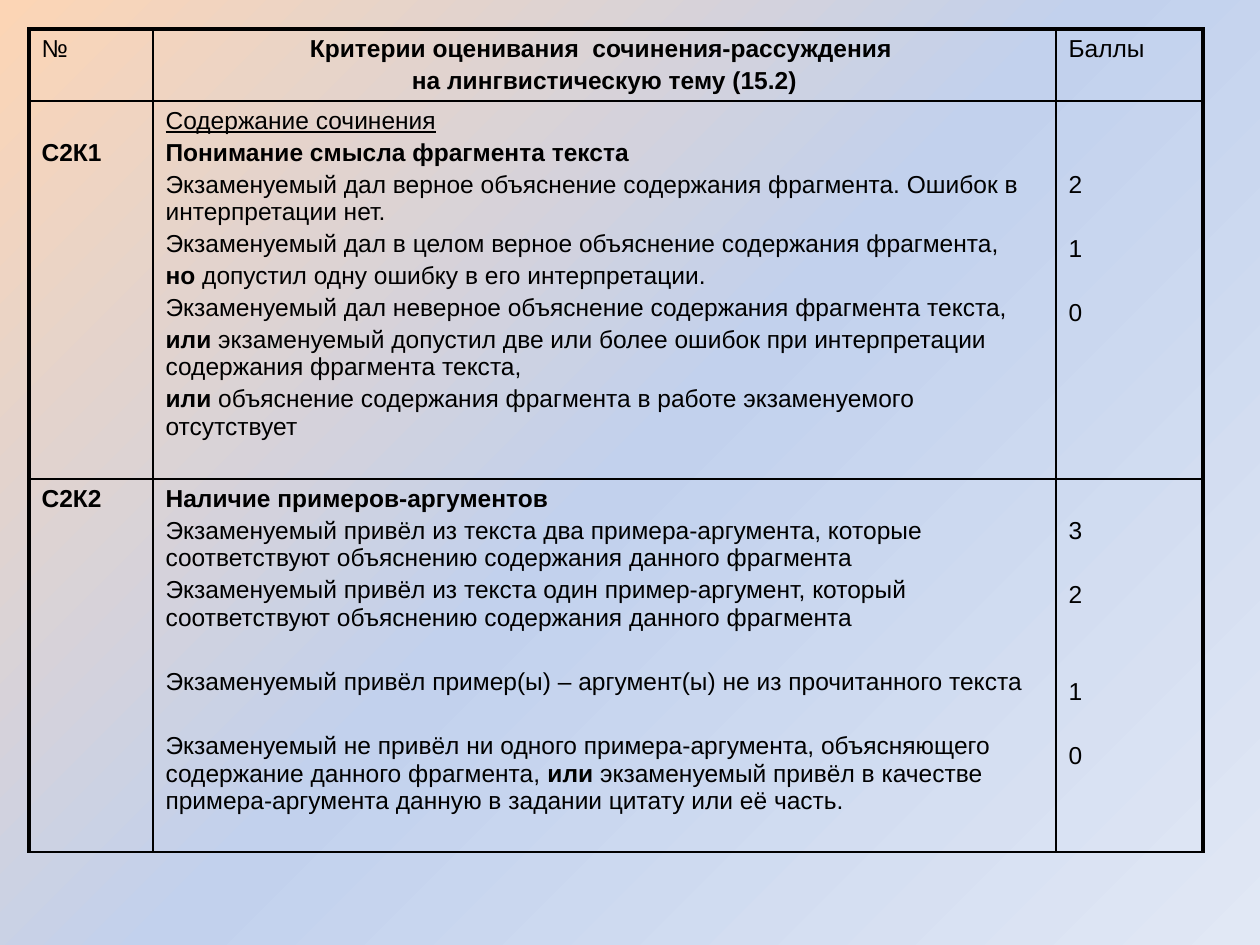
from dataclasses import dataclass

from pptx import Presentation
from pptx.dml.color import RGBColor
from pptx.enum.text import PP_ALIGN as Align
from pptx.oxml import parse_xml
from pptx.util import Pt

PX = 914400 / 126
NS = ('xmlns:a="http://schemas.openxmlformats.org/drawingml/2006/main" '
      'xmlns:p="http://schemas.openxmlformats.org/presentationml/2006/main"')


@dataclass(frozen=True)
class Theme:
    font: str = "Arial"
    size: int = 14
    ink: str = "000000"
    stops: tuple = ((0, "FCD5B5"), (50, "C2D1ED"), (100, "E1E8F5"))
    angle: int = 45
    thin: float = 1
    thick: float = 2.25
    gap: float = 2.5
    line: float = 18.5
    pad: int = 6
    step: int = 32


@dataclass(frozen=True)
class Par:
    text: str
    skip: int = 0
    under: bool = False


HEAD = [
    [Par("№")],
    [Par("*Критерии оценивания  сочинения-рассуждения *"),
     Par("*на лингвистическую тему (15.2)*")],
    [Par("Баллы")],
]
SENSE = [
    [Par("*С2К1*", 1)],
    [Par("Содержание сочинения", under=True),
     Par("*Понимание смысла фрагмента текста*"),
     Par("Экзаменуемый дал верное объяснение содержания фрагмента. "
         "Ошибок в интерпретации нет."),
     Par("Экзаменуемый дал в целом верное объяснение содержания фрагмента,"),
     Par("*но *допустил одну ошибку в его интерпретации."),
     Par("Экзаменуемый дал неверное объяснение содержания фрагмента текста,"),
     Par("*или *экзаменуемый допустил две или более ошибок при "
         "интерпретации содержания фрагмента текста,"),
     Par("*или *объяснение содержания фрагмента в работе экзаменуемого "
         "отсутствует")],
    [Par("2", 2), Par("1", 1), Par("0", 1)],
]
PROOF = [
    [Par("*С2К2*")],
    [Par("*Наличие примеров-аргументов*"),
     Par("Экзаменуемый привёл из текста два примера-аргумента, которые "
         "соответствуют объяснению содержания данного фрагмента"),
     Par("Экзаменуемый привёл из текста один пример-аргумент, который "
         "соответствуют объяснению содержания данного фрагмента"),
     Par("Экзаменуемый привёл пример(ы) – аргумент(ы) не из прочитанного "
         "текста", 1),
     Par("Экзаменуемый не привёл ни одного примера-аргумента, объясняющего "
         "содержание данного фрагмента, *или *экзаменуемый привёл в качестве "
         "примера-аргумента данную в задании цитату или её часть.", 1)],
    [Par("3", 1), Par("2", 1), Par("1", 2), Par("0", 1)],
]


def px(n):
    return round(n * PX)


class Deck:
    """Draws the elements of a slide in one theme."""

    def __init__(self, theme, width, height):
        self.theme = theme
        self.prs = Presentation()
        self.prs.slide_width, self.prs.slide_height = px(width), px(height)
        self.slide = self.prs.slides.add_slide(self.prs.slide_layouts[6])

    def back(self):
        stops = "".join(
            f'<a:gs pos="{pos * 1000}"><a:srgbClr val="{color}"/></a:gs>'
            for pos, color in self.theme.stops)
        self.slide.element.cSld.insert(0, parse_xml(
            f'<p:bg {NS}><p:bgPr><a:gradFill rotWithShape="1">'
            f'<a:gsLst>{stops}</a:gsLst>'
            f'<a:lin ang="{self.theme.angle * 60000}" scaled="0"/>'
            f'</a:gradFill><a:effectLst/></p:bgPr></p:bg>'))

    def table(self, x, y, cols, rows, data):
        grid = self.slide.shapes.add_table(
            len(rows), len(cols), px(x), px(y),
            px(sum(cols)), px(sum(rows))).table
        grid.first_row = grid.horz_banding = False
        for col, width in zip(grid.columns, cols):
            col.width = px(width)
        for row, height in zip(grid.rows, rows):
            row.height = px(height)
        for r, line in enumerate(data):
            for c, pars in enumerate(line):
                cell = grid.cell(r, c)
                heavy = {"L": c == 0, "R": c == len(cols) - 1, "T": r == 0}
                self.edges(cell, heavy)
                cell.fill.background()
                self.text(cell, pars, r == 0 and c == 1)

    def edges(self, cell, heavy):
        props = cell._tc.get_or_add_tcPr()
        for side in "LRTB":
            width = self.theme.thick if heavy.get(side) else self.theme.thin
            props.append(parse_xml(
                f'<a:ln{side} {NS} w="{Pt(width)}"><a:solidFill>'
                f'<a:srgbClr val="{self.theme.ink}"/></a:solidFill>'
                f'</a:ln{side}>'))

    def text(self, cell, pars, center):
        look = self.theme
        cell.margin_top = px(look.pad + look.step * pars[0].skip)
        frame = cell.text_frame
        for i, par in enumerate(pars):
            item = frame.add_paragraph() if i else frame.paragraphs[0]
            item.alignment = Align.CENTER if center else Align.LEFT
            item.space_before = Pt(look.gap + look.line * par.skip if i else 0)
            font = item.font
            font.name, font.size = look.font, Pt(look.size)
            font.color.rgb = RGBColor.from_string(look.ink)
            font.underline = par.under
            parts = [(bit, n % 2 == 1)
                     for n, bit in enumerate(par.text.split("*")) if bit]
            same = len(parts) == 1
            if same:
                font.bold = parts[0][1]
            for bit, bold in parts:
                run = item.add_run()
                run.text = bit
                if not same:
                    run.font.bold = bold


def main():
    deck = Deck(Theme(), 1260, 945)
    deck.back()
    deck.table(29, 29, [124, 903, 147], [72, 378, 373], [HEAD, SENSE, PROOF])
    deck.prs.save("out.pptx")


if __name__ == "__main__":
    main()
